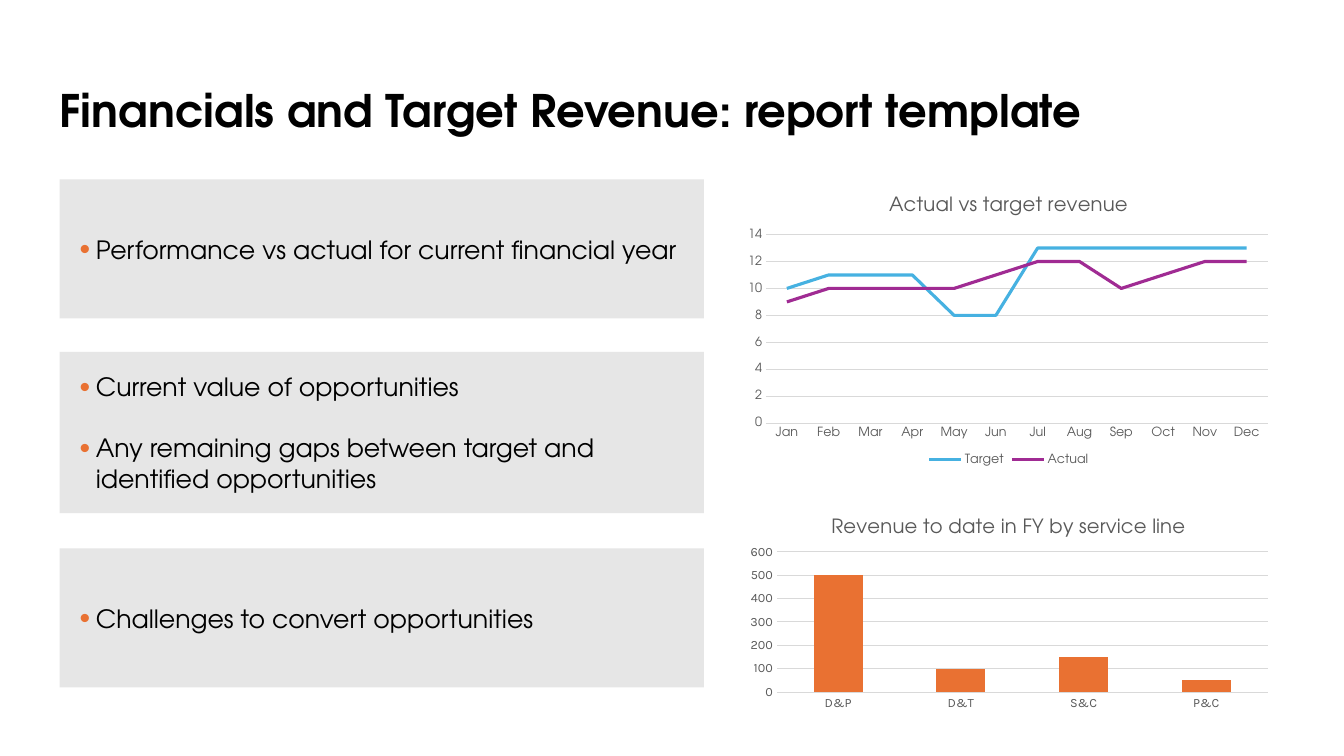
from dataclasses import dataclass

from lxml import etree
from pptx import Presentation
from pptx import util as u
from pptx.chart.chart import Chart
from pptx.chart.data import CategoryChartData
from pptx.dml.color import RGBColor
from pptx.enum import chart as ch, shapes, text
from pptx.oxml import ns
from pptx.slide import Slide
from pptx.text.text import Font, TextFrame

BLACK = RGBColor(0x00, 0x00, 0x00)
PANEL_GREY = RGBColor(0xE6, 0xE6, 0xE6)
LABEL_GREY = RGBColor(0x59, 0x59, 0x59)
GRID_GREY = RGBColor(0xD9, 0xD9, 0xD9)
ORANGE = RGBColor(0xE9, 0x71, 0x32)
BLUE = RGBColor(0x46, 0xB1, 0xE1)
PURPLE = RGBColor(0xA0, 0x2B, 0x93)

ADVENTOR = "TeX Gyre Adventor"
KARLA = "Karla"
LEFT, PANEL_WIDTH = 0.59, 6.39
CHART_LEFT, CHART_WIDTH = 7.33, 5.35
BULLET_INDENT = 0.16


@dataclass(frozen=True)
class Panel:
    top: float
    height: float
    points: tuple[str, ...]


@dataclass(frozen=True)
class Series:
    name: str
    values: tuple[int, ...]
    color: RGBColor


@dataclass(frozen=True)
class RevenueChart:
    kind: ch.XL_CHART_TYPE
    title: str
    top: float
    height: float
    font: str
    axis_max: int
    axis_step: int
    plot_box: tuple[float, float, float, float]
    categories: tuple[str, ...]
    series: tuple[Series, ...]


PANELS = (
    Panel(1.78, 1.38, ("Performance vs actual for current financial year",)),
    Panel(3.49, 1.6, ("Current value of opportunities",
                      "Any remaining gaps between target and identified opportunities")),
    Panel(5.44, 1.38, ("Challenges to convert opportunities",)),
)

CHARTS = (
    RevenueChart(
        ch.XL_CHART_TYPE.LINE, "Actual vs target revenue", 1.78, 2.88, ADVENTOR, 14, 2,
        (0.05, 0.19, 0.93, 0.65),
        ("Jan", "Feb", "Mar", "Apr", "May", "Jun",
         "Jul", "Aug", "Sep", "Oct", "Nov", "Dec"),
        (Series("Target", (10, 11, 11, 11, 8, 8, 13, 13, 13, 13, 13, 13), BLUE),
         Series("Actual", (9, 10, 10, 10, 10, 11, 12, 12, 10, 11, 12, 12), PURPLE)),
    ),
    RevenueChart(
        ch.XL_CHART_TYPE.COLUMN_CLUSTERED, "Revenue to date in FY by service line",
        4.99, 2.11, KARLA, 600, 100, (0.07, 0.23, 0.91, 0.66),
        ("D&P", "D&T", "S&C", "P&C"),
        (Series("Series 1", (500, 100, 150, 50), ORANGE),),
    ),
)


def set_font(font: Font, name: str, size: float, color: RGBColor, bold: bool = False) -> None:
    font.name, font.size, font.bold = name, u.Pt(size), bold
    font.color.rgb = color


def set_frame(frame: TextFrame, left_inset: float) -> None:
    frame.word_wrap = True
    frame.vertical_anchor = text.MSO_ANCHOR.MIDDLE
    frame.margin_left, frame.margin_right = u.Inches(left_inset), u.Inches(0.1)
    frame.margin_top = frame.margin_bottom = u.Inches(0.05)


def add_title(slide: Slide, wording: str) -> None:
    title = slide.shapes.add_textbox(
        u.Inches(LEFT), u.Inches(0.4), u.Inches(11.5), u.Inches(1.45))
    set_frame(title.text_frame, 0)
    line = title.text_frame.paragraphs[0]
    line.line_spacing = 0.9
    run = line.add_run()
    run.text = wording
    set_font(run.font, ADVENTOR, 32, BLACK, bold=True)


def add_bullet(paragraph) -> None:
    props = paragraph._p.get_or_add_pPr()
    indent = u.Inches(BULLET_INDENT)
    props.set("marL", str(indent))
    props.set("indent", str(-indent))
    color = etree.SubElement(props, ns.qn("a:buClr"))
    etree.SubElement(color, ns.qn("a:srgbClr"), val=str(ORANGE))
    etree.SubElement(props, ns.qn("a:buSzPct"), val="120000")
    etree.SubElement(props, ns.qn("a:buFont"), typeface="Arial")
    etree.SubElement(props, ns.qn("a:buChar"), char="•")


def add_panel(slide: Slide, panel: Panel) -> None:
    box = slide.shapes.add_shape(
        shapes.MSO_SHAPE.RECTANGLE, u.Inches(LEFT), u.Inches(panel.top),
        u.Inches(PANEL_WIDTH), u.Inches(panel.height))
    box.shadow.inherit = False
    box.fill.solid()
    box.fill.fore_color.rgb = PANEL_GREY
    box.line.fill.background()
    frame = box.text_frame
    set_frame(frame, 0.2)
    for index, point in enumerate(panel.points):
        paragraph = frame.add_paragraph() if index else frame.paragraphs[0]
        paragraph.alignment = text.PP_ALIGN.LEFT
        paragraph.space_before = u.Pt(22 if index else 0)
        add_bullet(paragraph)
        run = paragraph.add_run()
        run.text = point
        set_font(run.font, ADVENTOR, 18, BLACK)


def place_plot(chart: Chart, plot_box: tuple[float, float, float, float]) -> None:
    """Fix the inner plot area, given as fractions of the chart's size."""
    area = chart._chartSpace.chart.plotArea
    for automatic in area.findall(ns.qn("c:layout")):
        area.remove(automatic)
    layout = etree.Element(ns.qn("c:layout"))
    area.insert(0, layout)
    manual = etree.SubElement(layout, ns.qn("c:manualLayout"))
    settings = [("layoutTarget", "inner"), ("xMode", "edge"), ("yMode", "edge")]
    settings += zip("xywh", map(str, plot_box))
    for tag, value in settings:
        etree.SubElement(manual, ns.qn(f"c:{tag}"), val=value)


def style_axes(chart: Chart, model: RevenueChart) -> None:
    months, amounts = chart.category_axis, chart.value_axis
    for axis in (months, amounts):
        axis.major_tick_mark = axis.minor_tick_mark = ch.XL_TICK_MARK.NONE
        set_font(axis.tick_labels.font, model.font, 9, LABEL_GREY)
    amounts.minimum_scale, amounts.maximum_scale = 0, model.axis_max
    amounts.major_unit = model.axis_step
    amounts.format.line.fill.background()
    amounts.has_major_gridlines = True
    for line in (months.format.line, amounts.major_gridlines.format.line):
        line.color.rgb = GRID_GREY
        line.width = u.Pt(0.75)


def add_revenue_chart(slide: Slide, model: RevenueChart) -> None:
    data = CategoryChartData()
    data.categories = model.categories
    for series in model.series:
        data.add_series(series.name, series.values)
    chart = slide.shapes.add_chart(
        model.kind, u.Inches(CHART_LEFT), u.Inches(model.top),
        u.Inches(CHART_WIDTH), u.Inches(model.height), data).chart
    set_font(chart.font, model.font, 10, BLACK)
    heading = chart.chart_title.text_frame.paragraphs[0].add_run()
    heading.text = model.title
    set_font(heading.font, ADVENTOR, 14, LABEL_GREY)
    chart.chart_title.include_in_layout = False
    style_axes(chart, model)
    place_plot(chart, model.plot_box)

    plot = chart.plots[0]
    plot.vary_by_categories = False
    is_line = model.kind == ch.XL_CHART_TYPE.LINE
    chart.has_legend = is_line
    if is_line:
        chart.legend.position = ch.XL_LEGEND_POSITION.BOTTOM
        chart.legend.include_in_layout = False
        set_font(chart.legend.font, model.font, 9, LABEL_GREY)
    else:
        plot.gap_width, plot.overlap = 150, -27
    for drawn, series in zip(plot.series, model.series):
        if is_line:
            drawn.smooth = False
            drawn.marker.style = ch.XL_MARKER_STYLE.NONE
            drawn.format.line.color.rgb = series.color
            drawn.format.line.width = u.Pt(2.25)
        else:
            drawn.format.fill.solid()
            drawn.format.fill.fore_color.rgb = series.color


def main() -> None:
    deck = Presentation()
    deck.slide_width, deck.slide_height = u.Inches(13.33), u.Inches(7.5)
    slide = deck.slides.add_slide(deck.slide_layouts[6])
    add_title(slide, "Financials and Target Revenue: report template")
    for panel in PANELS:
        add_panel(slide, panel)
    for model in CHARTS:
        add_revenue_chart(slide, model)
    deck.save("out.pptx")


if __name__ == "__main__":
    main()
